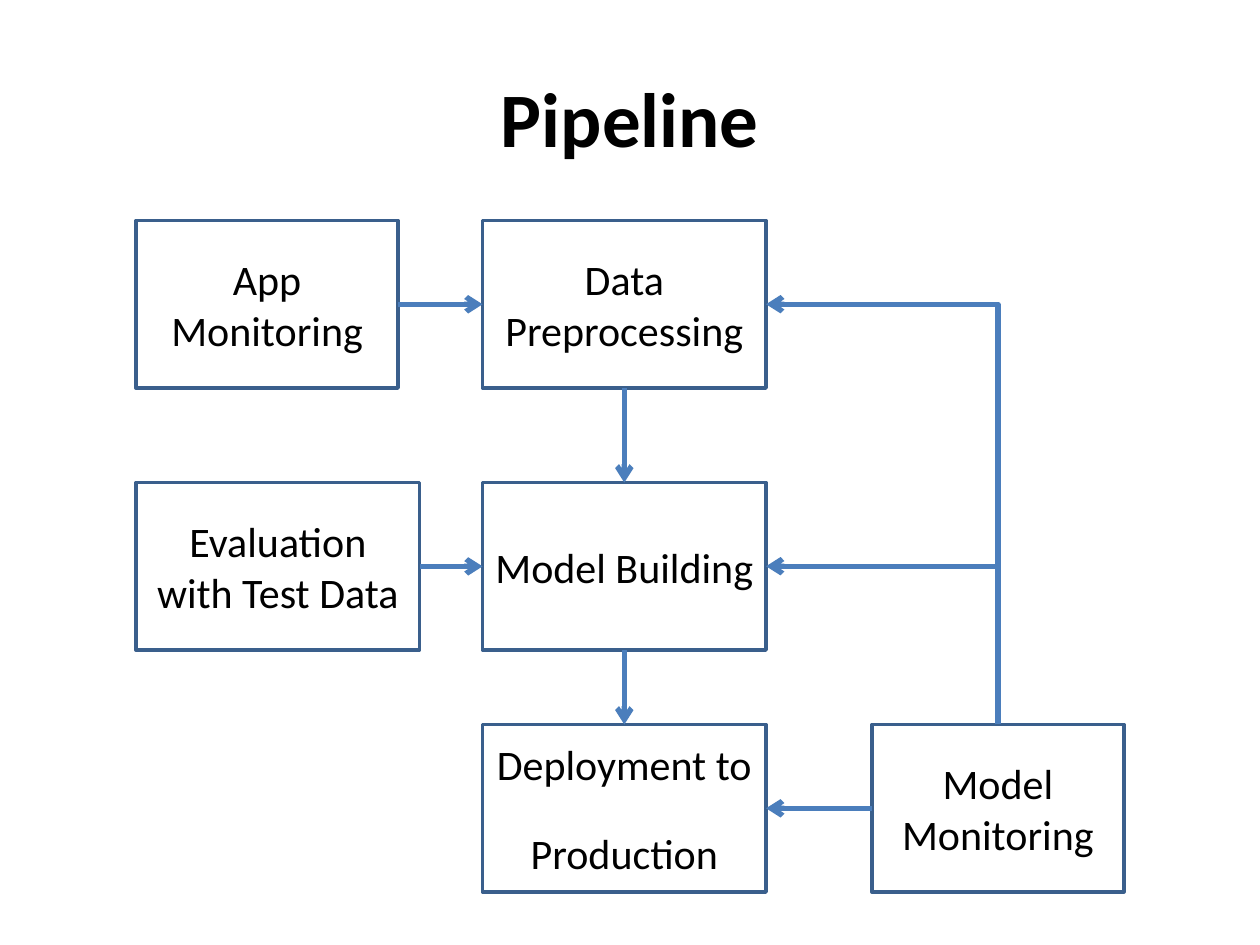
from pptx import Presentation
from pptx.dml.color import RGBColor
from pptx.enum.shapes import MSO_CONNECTOR, MSO_SHAPE
from pptx.enum.text import MSO_ANCHOR, PP_ALIGN
from pptx.oxml.ns import qn
from pptx.util import Inches, Pt
from lxml.etree import SubElement

COLORS = {"text": "000000", "box": "FFFFFF", "border": "3A5F8C", "arrow": "4B7EBC"}
BOX_HEIGHT = 1.33
TOP, LEFT, BOTTOM, RIGHT = range(4)  # connection sites of a rectangle


def write_text(shape, text, size, bold=False):
    text_frame = shape.text_frame
    text_frame.word_wrap = True
    text_frame.vertical_anchor = MSO_ANCHOR.MIDDLE
    text_frame.text = text
    paragraph = text_frame.paragraphs[0]
    paragraph.alignment = PP_ALIGN.CENTER
    for run in paragraph.runs:
        run.font.name = "Calibri"
        run.font.size = Pt(size)
        run.font.bold = bold
        run.font.color.rgb = RGBColor.from_string(COLORS["text"])


def add_arrow(kind, start, start_site, end, end_site):
    connector = slide.shapes.add_connector(kind, 0, 0, 0, 0)
    connector.begin_connect(start, start_site)
    connector.end_connect(end, end_site)
    connector.line.color.rgb = RGBColor.from_string(COLORS["arrow"])
    connector.line.width = Pt(3)
    SubElement(connector.line._get_or_add_ln(), qn("a:tailEnd"), type="arrow")
    SubElement(connector._element.spPr, qn("a:effectLst"))
    return connector


presentation = Presentation()
presentation.slide_width = Inches(10)
presentation.slide_height = Inches(7.5)
slide = presentation.slides.add_slide(presentation.slide_layouts[6])

# Title
title = slide.shapes.add_textbox(Inches(0.5), Inches(0.3), Inches(9), Inches(1.25))
write_text(title, "Pipeline", 44, bold=True)

# Pipeline stages: name, text, left, top, width
stages = [
    ("app", "App Monitoring", 1.08, 1.75, 2.08),
    ("data", "Data Preprocessing", 3.83, 1.75, 2.25),
    ("building", "Model Building", 3.83, 3.83, 2.25),
    ("evaluation", "Evaluation with Test Data", 1.08, 3.83, 2.25),
    ("monitoring", "Model\vMonitoring", 6.92, 5.75, 2),
    ("deployment", "Deployment to \vProduction", 3.83, 5.75, 2.25),
]
boxes = {}
for name, text, left, top, width in stages:
    box = slide.shapes.add_shape(
        MSO_SHAPE.RECTANGLE, Inches(left), Inches(top), Inches(width), Inches(BOX_HEIGHT)
    )
    box.shadow.inherit = False
    box.fill.solid()
    box.fill.fore_color.rgb = RGBColor.from_string(COLORS["box"])
    box.line.color.rgb = RGBColor.from_string(COLORS["border"])
    box.line.width = Pt(2)
    write_text(box, text, 24)
    boxes[name] = box

# Straight arrows between neighbouring stages
for start, start_site, end, end_site in [
    ("app", RIGHT, "data", LEFT),
    ("data", BOTTOM, "building", TOP),
    ("building", BOTTOM, "deployment", TOP),
    ("monitoring", LEFT, "deployment", RIGHT),
    ("evaluation", RIGHT, "building", LEFT),
]:
    add_arrow(MSO_CONNECTOR.STRAIGHT, boxes[start], start_site, boxes[end], end_site)

# Feedback arrows: one bend, up from monitoring and then left
for target in ("building", "data"):
    connector = add_arrow(
        MSO_CONNECTOR.ELBOW, boxes["monitoring"], TOP, boxes[target], RIGHT
    )
    properties = connector._element.spPr
    properties.find(qn("a:prstGeom")).set("prst", "bentConnector2")
    transform = properties.find(qn("a:xfrm"))
    transform.set("rot", str(270 * 60000))
    transform.set("flipH", "0")
    transform.set("flipV", "1")
    # A quarter turn swaps width and height around the same centre
    width, height = connector.width, connector.height
    connector.left += (width - height) // 2
    connector.top += (height - width) // 2
    connector.width, connector.height = height, width

presentation.save("out.pptx")
